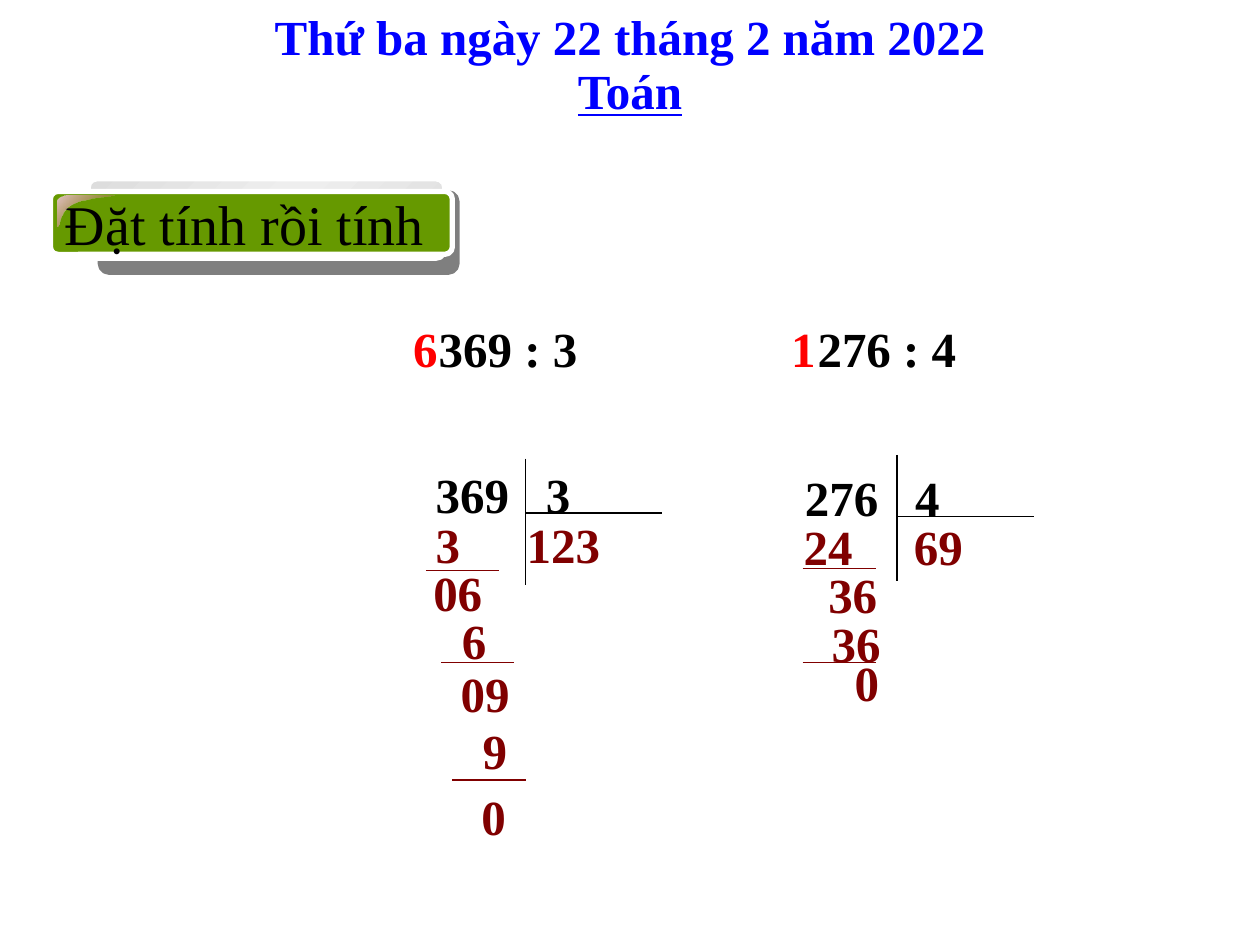
"""Build a slide showing two worked long divisions under a lesson heading."""

from dataclasses import dataclass, field

from lxml.etree import SubElement
from pptx import Presentation
from pptx.dml.color import RGBColor as Rgb
from pptx.enum.shapes import MSO_CONNECTOR as Connector, MSO_SHAPE as Preset
from pptx.enum.text import MSO_ANCHOR as Anchor, PP_ALIGN as Align
from pptx.oxml.ns import qn
from pptx.util import Pt

Point = tuple[float, float]


@dataclass(frozen=True)
class Theme:
    """Colours, font and type sizes."""

    font: str = "Times New Roman"
    body_size: int = 28
    banner_size: int = 32
    ink: str = "000000"
    paper: str = "FFFFFF"
    title: str = "0000FF"
    working: str = "800000"
    leading: str = "FF0000"
    banner: str = "669900"
    plate: tuple = ((0, "DDDDDD", 100), (50, "EEEEEE", 100), (100, "DDDDDD", 100))
    gloss: tuple = ((0, "E3C4C4", 100), (100, "C0504D", 0))


THEME = Theme()


@dataclass(frozen=True)
class Label:
    """One line of text in a box, with an optional indent or tab stop."""

    text: str
    left: float
    top: float
    width: float
    color: str = THEME.working
    indent: float = 0
    tab: float = 0
    centred: bool = False
    underline: bool = False
    fill: str = ""


@dataclass(frozen=True)
class Division:
    """A long division: its bracket, written rows and subtraction rules."""

    corner: Point
    bar_drop: float
    rows: list[Label] = field(default_factory=list)
    rules: list[Point] = field(default_factory=list)


HEADINGS = [
    Label("Toán", 0, 31, 720, THEME.title, centred=True, underline=True),
    Label("Thứ ba ngày 22 tháng 2 năm 2022", 0, 0, 720, THEME.title, centred=True),
    Label("6", 229, 178.6, 23.8, THEME.leading),
    Label("1", 445, 178.6, 23.8, THEME.leading),
    Label("369 : 3", 201.6, 178.6, 213, THEME.ink, indent=42),
    Label("276 : 4", 460.1, 178.6, 168, THEME.ink),
]

DIVISIONS = [
    Division(
        (300.2, 262.1), 31,
        [
            Label("369\t3", 241.9, 262.1, 186, THEME.ink, tab=63),
            Label("3\t123", 241.9, 290.2, 136, tab=52),
            Label("06", 240.5, 318.2, 60),
            Label("6", 249.8, 345.6, 60, indent=7),
            Label("09", 249.1, 375.8, 60, indent=7),
            Label("9", 247.7, 408.2, 60, indent=21),
            Label("0", 247, 445.7, 60, indent=21, fill=THEME.paper),
        ],
        [(243.4, 326.2), (252, 378.7), (258.5, 445.7)],
    ),
    Division(
        (512.6, 259.9), 35.3,
        [
            Label("276\t4", 452.9, 263.5, 186, THEME.ink, tab=63),
            Label("24\t69", 452.2, 291.6, 150, tab=63),
            Label("36", 452.2, 319, 63.4, indent=14),
            Label("36", 447.1, 347, 77, indent=21),
            Label("0", 467.3, 369.4, 48.2, indent=14),
        ],
        [(458.6, 324.7), (458.6, 378.7)],
    ),
]


def write(para, text: str, size: int, color: str, bold: bool, underline: bool = False) -> None:
    """Add one styled run to a paragraph."""
    span = para.add_run()
    span.text = text
    font = span.font
    font.name, font.size, font.bold = THEME.font, Pt(size), bold
    font.color.rgb = Rgb.from_string(color)
    if underline:
        font.underline = True


def add_label(page, label: Label) -> None:
    """Draw a label as a text box."""
    box = page.shapes.add_textbox(Pt(label.left), Pt(label.top), Pt(label.width), Pt(41))
    if label.fill:
        box.fill.solid()
        box.fill.fore_color.rgb = Rgb.from_string(label.fill)
    box.text_frame.word_wrap = True
    para = box.text_frame.paragraphs[0]
    para.alignment = Align.CENTER if label.centred else Align.LEFT
    settings = para._p.get_or_add_pPr()
    if label.indent:
        settings.set("marL", str(Pt(label.indent)))
        settings.set("indent", "0")
    if label.tab:
        stops = SubElement(settings, qn("a:tabLst"))
        SubElement(stops, qn("a:tab"), pos=str(Pt(label.tab)), algn="l")
    write(para, label.text, THEME.body_size, label.color, True, label.underline)


def add_line(page, start: Point, width: float, height: float, color: str) -> None:
    """Draw a thin straight line without a shadow."""
    x, y = start
    line = page.shapes.add_connector(
        Connector.STRAIGHT, Pt(x), Pt(y), Pt(x + width), Pt(y + height)
    )
    line.line.width = Pt(0.75)
    line.line.color.rgb = Rgb.from_string(color)
    SubElement(line._element.spPr, qn("a:effectLst"))


def add_division(page, division: Division) -> None:
    """Draw the bracket, rows and rules of a division."""
    x, y = division.corner
    add_line(page, (x, y), 0, 72, THEME.ink)
    add_line(page, (x, y + division.bar_drop), 78, 0, THEME.ink)
    for row in division.rows:
        add_label(page, row)
    for rule in division.rules:
        add_line(page, rule, 42, 0, THEME.working)


def add_color(parent, value: str, opacity: int) -> None:
    """Append a colour with its opacity in percent."""
    color = SubElement(parent, qn("a:srgbClr"), val=value)
    if opacity < 100:
        SubElement(color, qn("a:alpha"), val=str(opacity * 1000))


def set_gradient(shape, stops: tuple) -> None:
    """Fill a shape with a diagonal gradient."""
    shape.fill.background()
    blank = shape._element.spPr.find(qn("a:noFill"))
    gradient = SubElement(shape._element.spPr, qn("a:gradFill"), rotWithShape="1")
    stop_list = SubElement(gradient, qn("a:gsLst"))
    for position, value, opacity in stops:
        stop = SubElement(stop_list, qn("a:gs"), pos=str(position * 1000))
        add_color(stop, value, opacity)
    SubElement(gradient, qn("a:lin"), ang=str(45 * 60000), scaled="1")
    blank.getparent().replace(blank, gradient)


def add_plate(page, left: float, top: float, width: float, height: float, corner: float):
    """Draw a rounded plate with a white outline."""
    plate = page.shapes.add_shape(
        Preset.ROUNDED_RECTANGLE, Pt(left), Pt(top), Pt(width), Pt(height)
    )
    plate.adjustments[0] = corner
    plate.shadow.inherit = False
    plate.line.width = Pt(3)
    plate.line.color.rgb = Rgb.from_string(THEME.paper)
    return plate


def curve(*controls: Point) -> list[Point]:
    """Return points along a cubic curve, leaving out its start."""
    def blend(t: float, axis: int) -> float:
        u = 1 - t
        weights = (u**3, 3 * u * u * t, 3 * u * t * t, t**3)
        return sum(weight * point[axis] for weight, point in zip(weights, controls))

    return [(blend(step / 12, 0), blend(step / 12, 1)) for step in range(1, 13)]


def add_banner(page) -> None:
    """Draw the shadowed banner, its glossy corner and its caption."""
    back = add_plate(page, 50.4, 102.2, 203.8, 45.4, 0.11)
    set_gradient(back, THEME.plate)
    effects = back._element.spPr.find(qn("a:effectLst"))
    shadow = SubElement(effects, qn("a:outerShdw"), dist=str(Pt(10.6)),
                        dir=str(49 * 60000), algn="ctr", rotWithShape="0")
    add_color(shadow, THEME.ink, 50)

    front = add_plate(page, 28.8, 109.4, 229.7, 36, 0.12)
    front.fill.solid()
    front.fill.fore_color.rgb = Rgb.from_string(THEME.banner)
    frame = front.text_frame
    frame.word_wrap = False
    frame.vertical_anchor = Anchor.MIDDLE
    para = frame.paragraphs[0]
    para.alignment = Align.LEFT
    write(para, "Đặt tính rồi tính", THEME.banner_size, THEME.ink, False)

    top_left, side, foot = (39.6, 111.6), (33.1, 115.2), (33.1, 129.6)
    middle, tip = (41.8, 116.6), (65.5, 111.6)
    outline = curve(top_left, (36, 111.6), (33.1, 113), side) + [foot]
    outline += curve(foot, (34.6, 129.6), (33.8, 121), middle)
    outline += curve(middle, (49.7, 113), (65.5, 112.3), tip)
    builder = page.shapes.build_freeform(Pt(top_left[0]), Pt(top_left[1]))
    builder.add_line_segments([(Pt(x), Pt(y)) for x, y in outline], close=True)
    gloss = builder.convert_to_shape()
    gloss.shadow.inherit = False
    gloss.line.fill.background()
    set_gradient(gloss, THEME.gloss)


def main() -> None:
    """Build and save the deck."""
    deck = Presentation()
    deck.slide_width, deck.slide_height = Pt(720), Pt(540)
    page = deck.slides.add_slide(deck.slide_layouts[6])
    add_banner(page)
    for division in DIVISIONS:
        add_division(page, division)
    for heading in HEADINGS:
        add_label(page, heading)
    deck.save("out.pptx")


if __name__ == "__main__":
    main()
